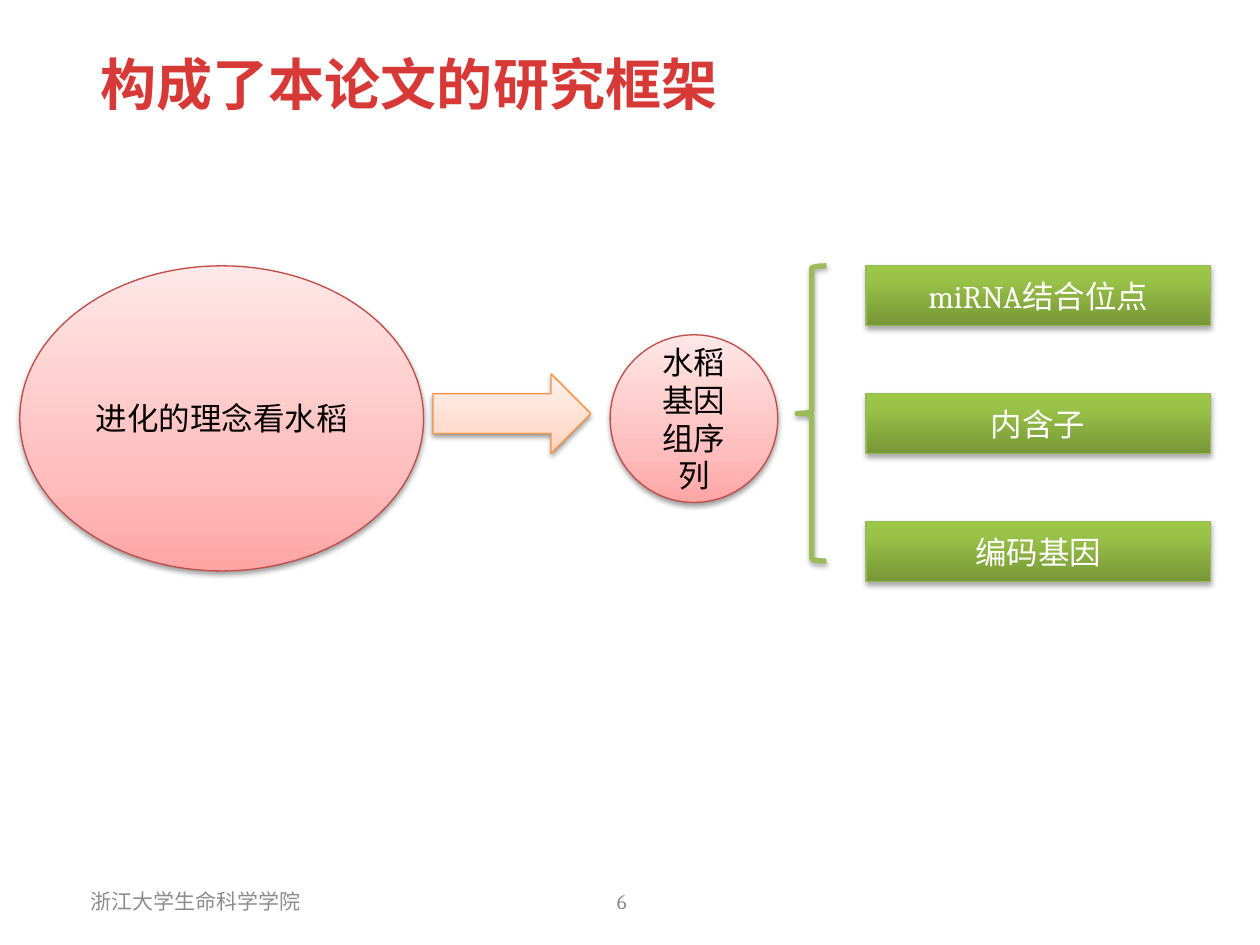
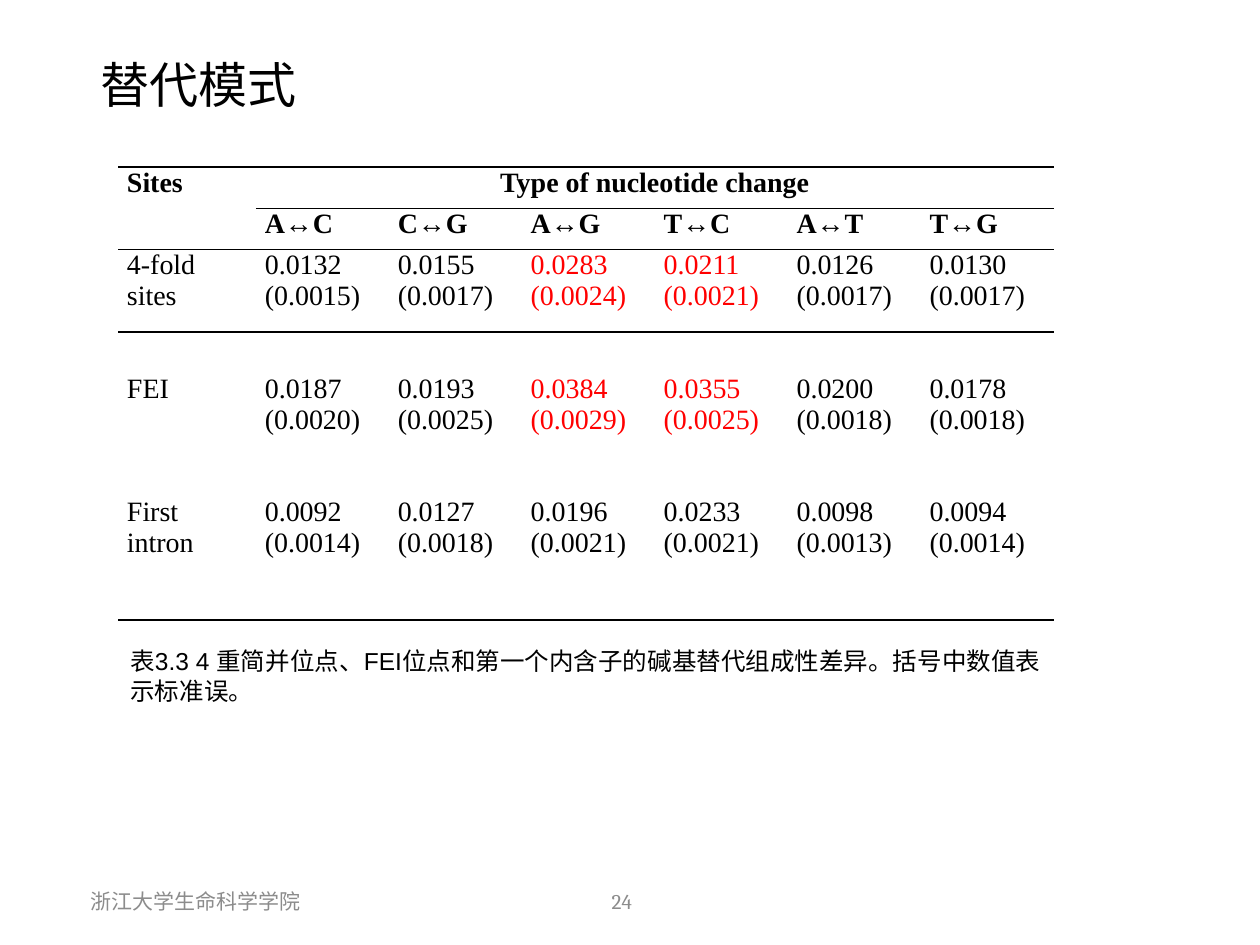
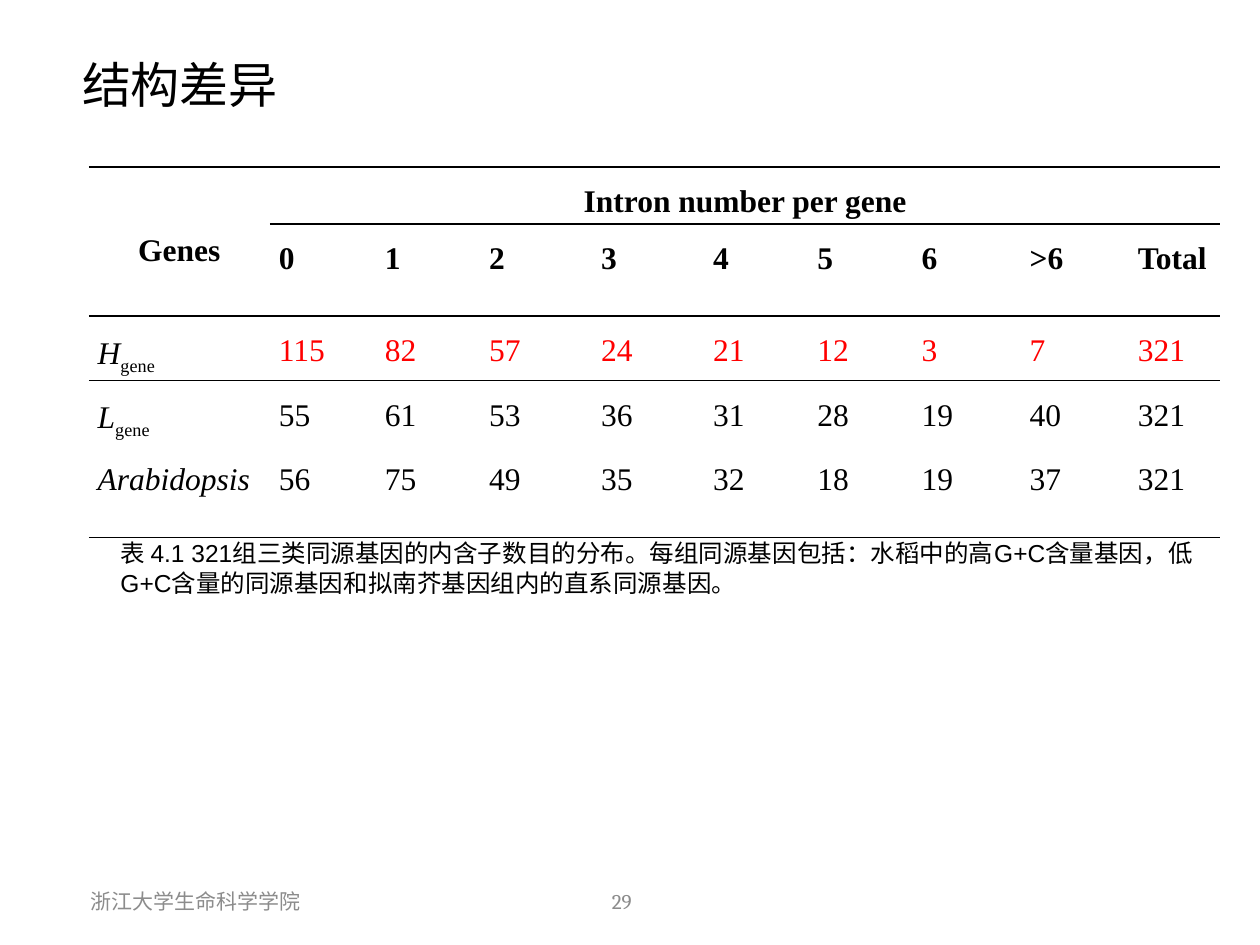
from copy import deepcopy

from lxml.etree import SubElement
from pptx import Presentation
from pptx.dml.color import RGBColor
from pptx.enum.shapes import MSO_SHAPE as SHAPE
from pptx.enum.text import MSO_ANCHOR as ANCHOR, PP_ALIGN as ALIGN
from pptx.oxml import parse_xml
from pptx.oxml.ns import nsdecls, qn
from pptx.util import Cm, Pt

COLORS = {
    "black": "000000", "white": "FFFFFF", "grey": "8C8C8C",
    "title_red": "D73A36", "mark": "FF0000",
    "pink_line": "BF4C48", "orange_line": "F69240",
    "green_line": "98B955", "brace": "9BBB59",
}
# Gradient stops run from bottom to top
GRADIENTS = {
    "pink": [(0, "FFA6A5"), (0.35, "FFC0BF"), (1, "FFE7E7")],
    "orange": [(0, "FFD2BD"), (0.35, "FFDED0"), (1, "FFF2ED")],
    "green": [(0, "779737"), (0.8, "9BC348"), (1, "9DC746")],
}
PLAIN_TABLE = "{2D5ABB26-0587-4C30-8999-92F81FD0307C}"
BODY, HEAD, CAPTION, TABLE = "Cambria", "Calibri", "Arial", "Times New Roman"
FOOTER = "浙江大学生命科学学院"


def rgb(name):
    return RGBColor.from_string(COLORS[name])


def cm(*lengths):
    return [Cm(n) for n in lengths]


class Deck:
    """Holds the shared style and the slide being built."""

    def __init__(self):
        self.prs = Presentation()
        self.prs.slide_width, self.prs.slide_height = cm(25.4, 19.05)
        self.s = None

    def style(self, p, size, font=BODY, color="black", bold=False, align=ALIGN.LEFT):
        p.alignment = align
        for r in p.runs:
            f = r.font
            f.name, f.size, f.bold = font, Pt(size), bold
            f.color.rgb = rgb(color)

    def slide(self, title, number, left=1.78, size=28, color="black", bold=False):
        self.s = self.prs.slides.add_slide(self.prs.slide_layouts[5])
        sp = self.s.shapes.title
        sp.left, sp.top, sp.width, sp.height = cm(left, 0.77, 22.35, 1.83)
        tf = sp.text_frame
        tf.text = title
        tf.vertical_anchor = ANCHOR.MIDDLE
        self.style(tf.paragraphs[0], size, HEAD, color, bold)
        # Footer and page number
        self.text(FOOTER, (1.57, 17.65, 7.75, 1.02), 12, color="grey")
        self.text(str(number), (10.72, 17.65, 3.63, 1.02), 12, color="grey",
                  align=ALIGN.CENTER)

    def text(self, text, box, size, **look):
        tf = self.s.shapes.add_textbox(*cm(*box)).text_frame
        tf.word_wrap = True
        tf.vertical_anchor = ANCHOR.MIDDLE
        tf.text = text
        self.style(tf.paragraphs[0], size, **look)

    def shape(self, kind, box, line, gradient=None, text="", color="black",
              width=0.75, alpha=38):
        sp = self.s.shapes.add_shape(kind, *cm(*box))
        if gradient:
            self.gradient(sp, GRADIENTS[gradient])
        else:
            sp.fill.background()
        sp.line.color.rgb = rgb(line)
        sp.line.width = Pt(width)
        self.shadow(sp, alpha)
        if text:
            tf = sp.text_frame
            tf.text = text
            tf.vertical_anchor = ANCHOR.MIDDLE
            self.style(tf.paragraphs[0], 18, color=color, align=ALIGN.CENTER)

    def gradient(self, sp, stops):
        sp.fill.gradient()
        sp.fill.gradient_angle = 90
        gs_list = sp._element.spPr.find(qn("a:gradFill")).find(qn("a:gsLst"))
        gs_list.append(deepcopy(gs_list[-1]))
        for stop, (position, color) in zip(sp.fill.gradient_stops, stops):
            stop.position = position
            stop.color.rgb = RGBColor.from_string(color)

    def shadow(self, sp, alpha):
        sp.shadow.inherit = False
        effects = sp._element.spPr.find(qn("a:effectLst"))
        outer = SubElement(effects, qn("a:outerShdw"), blurRad=str(Pt(3.1)),
                           dist=str(Pt(1.7)), dir="5400000", rotWithShape="0")
        clr = SubElement(outer, qn("a:srgbClr"), val=COLORS["black"])
        SubElement(clr, qn("a:alpha"), val=str(alpha * 1000))

    def table(self, rows, corner, widths, heights, size, spacing=1.0, marked=()):
        frame = self.s.shapes.add_table(
            len(rows), len(widths), *cm(*corner, sum(widths), sum(heights)))
        table = frame.table
        table.first_row = table.horz_banding = False
        table._tbl.tblPr.find(qn("a:tableStyleId")).text = PLAIN_TABLE
        for column, width in zip(table.columns, widths):
            column.width = Cm(width)
        for row, height in zip(table.rows, heights):
            row.height = Cm(height)
        for i, row in enumerate(rows):
            for j in range(len(widths)):
                cell = table.cell(i, j)
                cell.fill.background()
                cell.margin_left = cell.margin_right = Cm(0.18)
                cell.margin_top = cell.margin_bottom = 0
                cell.text = row[j] if j < len(row) else ""
                for p in cell.text_frame.paragraphs:
                    p.line_spacing = spacing
                    self.style(p, size, TABLE, "mark" if (i, j) in marked else "black",
                               bold=i < 2, align=ALIGN.JUSTIFY)
        return table

    def rule(self, table, after, first=0):
        """Draw a line below a row; -1 is the top edge of the table."""
        for edge, i in (("lnB", after), ("lnT", after + 1)):
            if not 0 <= i < len(table.rows):
                continue
            for j in range(first, len(table.columns)):
                tc_pr = table.cell(i, j)._tc.get_or_add_tcPr()
                tc_pr[-1].addprevious(parse_xml(
                    f'<a:{edge} {nsdecls("a")} w="{Pt(1)}"><a:solidFill>'
                    f'<a:srgbClr val="{COLORS["black"]}"/></a:solidFill></a:{edge}>'))

    def merge_header(self, table, row, last_column):
        table.cell(row, 1).merge(table.cell(row, last_column))
        table.cell(row, 1).text_frame.paragraphs[0].alignment = ALIGN.CENTER


def framework(deck):
    deck.slide("构成了本论文的研究框架", 6, size=32, color="title_red", bold=True)
    deck.shape(SHAPE.OVAL, (0.4, 5.36, 8.14, 6.15), "pink_line", "pink", "进化的理念看水稻")
    deck.shape(SHAPE.OVAL, (12.3, 6.75, 3.38, 3.38), "pink_line", "pink", "水稻基因组序列")
    deck.shape(SHAPE.RIGHT_ARROW, (8.73, 7.54, 3.18, 1.6), "orange_line", "orange")
    deck.shape(SHAPE.LEFT_BRACE, (16.07, 5.36, 0.59, 5.95), "brace", width=3, alpha=35)
    for i, topic in enumerate(["miRNA结合位点", "内含子", "编码基因"]):
        deck.shape(SHAPE.RECTANGLE, (17.46, 5.36 + i * 2.58, 6.94, 1.2), "green_line",
                   "green", topic, "white", alpha=35)


def substitution(deck):
    deck.slide("替代模式", 24)
    rates = {
        "4-fold sites": "0.0132 (0.0015) 0.0155 (0.0017) 0.0283 (0.0024) "
                        "0.0211 (0.0021) 0.0126 (0.0017) 0.0130 (0.0017)",
        "FEI": "0.0187 (0.0020) 0.0193 (0.0025) 0.0384 (0.0029) "
               "0.0355 (0.0025) 0.0200 (0.0018) 0.0178 (0.0018)",
        "First intron": "0.0092 (0.0014) 0.0127 (0.0018) 0.0196 (0.0021) "
                        "0.0233 (0.0021) 0.0098 (0.0013) 0.0094 (0.0014)",
    }
    rows = [["Sites", "Type of nucleotide change"],
            ["", "A↔C", "C↔G", "A↔G", "T↔C", "A↔T", "T↔G"]]
    for site, numbers in rates.items():
        rates_and_errors = numbers.replace(" (", "\n(").split(" ")
        rows += [[site, *rates_and_errors], []]
    table = deck.table(rows, (2.38, 3.37), [2.78] + [2.68] * 6,
                       [0.83] * 2 + [1.66, 0.83] * 3, 16,
                       marked={(i, j) for i in (2, 4) for j in (3, 4)})
    deck.merge_header(table, 0, 6)
    for after, first in ((-1, 0), (0, 1), (1, 0), (7, 0)):
        deck.rule(table, after, first)
    deck.text("表3.3 4 重简并位点、FEI位点和第一个内含子的碱基替代组成性差异。"
              "括号中数值表示标准误。", (2.38, 12.9, 19.05, 1.45), 14, font=CAPTION)


def structure(deck):
    deck.slide("结构差异", 29, left=1.4)
    rows = [["Genes", "Intron number per gene"],
            ["", "0", "1", "2", "3", "4", "5", "6", ">6", "Total"],
            "H 115 82 57 24 21 12 3 7 321".split(),
            "L 55 61 53 36 31 28 19 40 321".split(),
            "Arabidopsis 56 75 49 35 32 18 19 37 321".split()]
    widths = [3.65, 2.14, 2.1, 2.26, 2.26, 2.1, 2.1, 2.18, 2.18, 1.84]
    table = deck.table(rows, (1.79, 3.37), widths, [0.93, 1.86, 0.93, 0.93, 1.86], 18,
                       spacing=1.5, marked={(2, j) for j in range(1, 10)})
    deck.merge_header(table, 0, 9)
    genes = table.cell(0, 0)
    genes.merge(table.cell(1, 0))
    genes.vertical_anchor = ANCHOR.MIDDLE
    genes.text_frame.paragraphs[0].alignment = ALIGN.CENTER
    # Gene classes: italic names, the first two with a subscript
    for i in (2, 3, 4):
        p = table.cell(i, 0).text_frame.paragraphs[0]
        if i < 4:
            p.add_run().text = "gene"
            deck.style(p, 18, TABLE, align=ALIGN.JUSTIFY)
            p.runs[1].font._element.set("baseline", "-25000")
        p.runs[0].font.italic = True
    for after, first in ((-1, 0), (0, 1), (1, 0), (4, 0)):
        deck.rule(table, after, first)
    deck.text("表 4.1 321组三类同源基因的内含子数目的分布。每组同源基因包括：水稻中的高G+C含量基因，"
              "低G+C含量的同源基因和拟南芥基因组内的直系同源基因。",
              (2.18, 10.72, 22.23, 1.45), 14, font=CAPTION)


def main():
    deck = Deck()
    framework(deck)
    substitution(deck)
    structure(deck)
    deck.prs.save("out.pptx")


if __name__ == "__main__":
    main()
